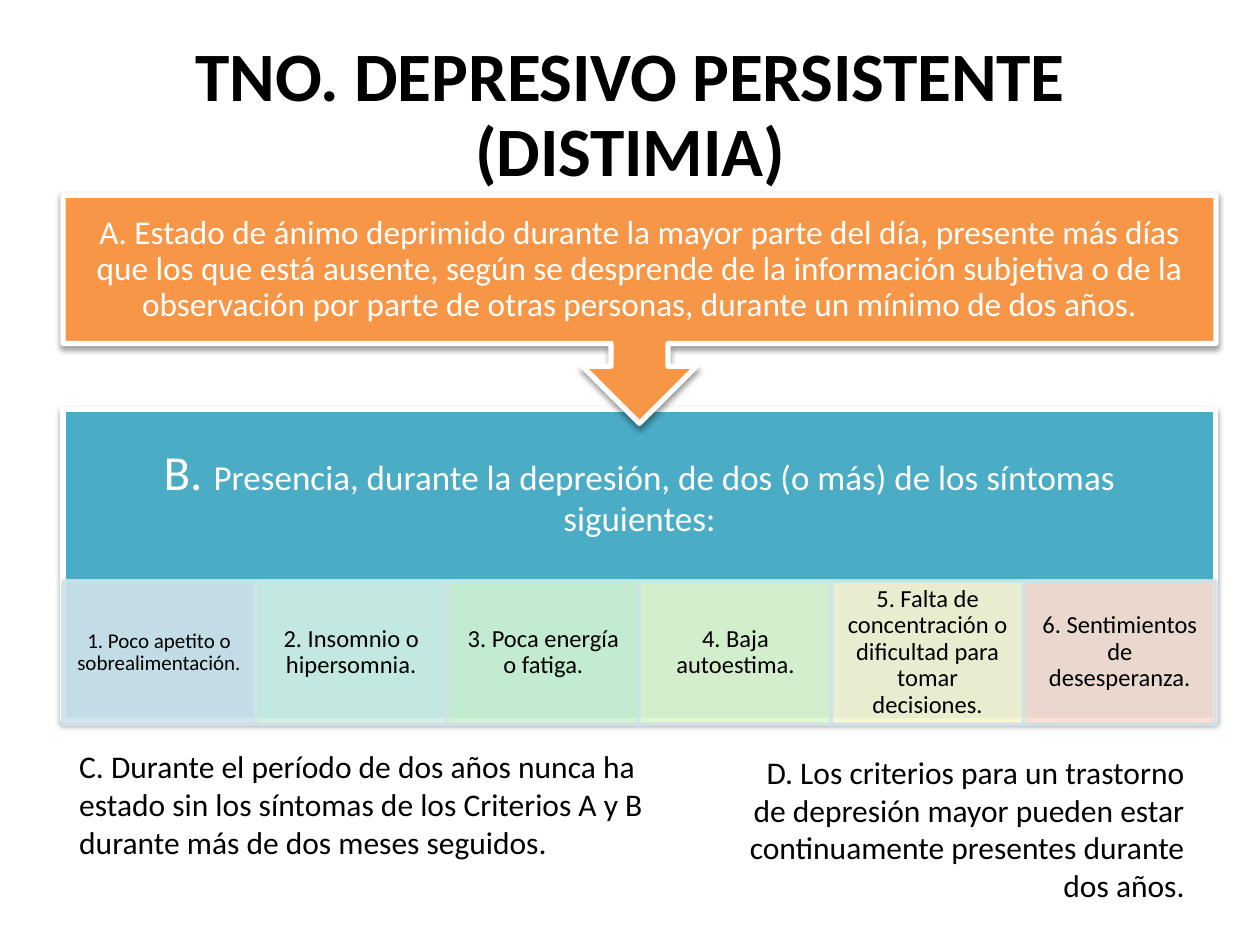
"""Build the slide on the criteria for persistent depressive disorder."""
from lxml import etree
from pptx import Presentation
from pptx.dml.color import RGBColor
from pptx.enum.shapes import MSO_SHAPE
from pptx.enum.text import MSO_ANCHOR, MSO_AUTO_SIZE, PP_ALIGN
from pptx.oxml.ns import qn
from pptx.util import Pt

RECTANGLE = MSO_SHAPE.RECTANGLE
CALLOUT = MSO_SHAPE.DOWN_ARROW_CALLOUT
MIDDLE, TOP = MSO_ANCHOR.MIDDLE, MSO_ANCHOR.TOP
LEFT, CENTER, RIGHT = PP_ALIGN.LEFT, PP_ALIGN.CENTER, PP_ALIGN.RIGHT
COLORS = {"white": "FFFFFF", "black": "000000", "orange": "F79646",
          "teal": "4BACC6", "border": "D0E3EA"}
CELL_FILLS = ["D0E3EA", "CFEFE5", "CFF2D2", "E2F6CE", "F9F5CF", "FCDDCF"]
SYMPTOMS = [
    "1. Poco apetito o sobrealimentación.",
    "2. Insomnio o hipersomnia.",
    "3. Poca energía o fatiga.",
    "4. Baja autoestima.",
    "5. Falta de concentración o dificultad para tomar decisiones.",
    "6. Sentimientos de desesperanza.",
]
DIAGRAM_LEFT, DIAGRAM_WIDTH = 36, 658.8


def write_text(shape, pieces, color, alignment, margins, anchor=MIDDLE, spacing=0.9):
    """Fill the shape with one paragraph of (text, size) pieces."""
    frame = shape.text_frame
    frame.word_wrap = True
    frame.vertical_anchor = anchor
    frame.margin_left, frame.margin_top, frame.margin_right, frame.margin_bottom = map(Pt, margins)
    paragraph = frame.paragraphs[0]
    paragraph.alignment = alignment
    paragraph.line_spacing = spacing
    for text, size in pieces:
        run = paragraph.add_run()
        run.text = text
        run.font.name = "Calibri"
        run.font.size = Pt(size)
        run.font.color.rgb = RGBColor.from_string(color)


def add_box(kind, left, top, width, height, fill, line, line_width, opacity=None):
    """Add a filled shape: translucent if opacity is given, else with a soft shadow."""
    shape = slide.shapes.add_shape(kind, Pt(left), Pt(top), Pt(width), Pt(height))
    shape.fill.solid()
    shape.fill.fore_color.rgb = RGBColor.from_string(fill)
    shape.line.color.rgb = RGBColor.from_string(line)
    shape.line.width = Pt(line_width)
    shape.shadow.inherit = False
    properties = shape._element.spPr
    if opacity:
        for color in properties.iter(qn("a:srgbClr")):
            etree.SubElement(color, qn("a:alpha"), val=str(opacity * 1000))
    else:
        shadow = etree.SubElement(properties.find(qn("a:effectLst")), qn("a:outerShdw"),
                                  blurRad=str(Pt(3.1)), dist=str(Pt(1.6)),
                                  dir="5400000", rotWithShape="0")
        color = etree.SubElement(shadow, qn("a:srgbClr"), val=COLORS["black"])
        etree.SubElement(color, qn("a:alpha"), val="38000")
    return shape


presentation = Presentation()
presentation.slide_width, presentation.slide_height = Pt(720), Pt(540)
slide = presentation.slides.add_slide(presentation.slide_layouts[5])

title = slide.shapes.title
title.left, title.top, title.width, title.height = Pt(36), Pt(21.6), Pt(648), Pt(90)
write_text(title, [("TNO. DEPRESIVO PERSISTENTE (DISTIMIA)", 39.6)],
           COLORS["black"], CENTER, (7.2, 3.6, 7.2, 3.6))
title_run = title.text_frame.paragraphs[0].runs[0]
title_run.font.bold = True
title_run._r.get_or_add_rPr().set("spc", "-10")

criterion_b = add_box(RECTANGLE, DIAGRAM_LEFT, 234, DIAGRAM_WIDTH, 177.84,
                      COLORS["teal"], COLORS["white"], 3)
write_text(criterion_b, [
    ("B. ", 28),
    ("Presencia, durante la depresión, de dos (o más) de los síntomas siguientes:", 20),
], COLORS["white"], CENTER, (15.84, 15.84, 15.84, 97.92))

cell_width = DIAGRAM_WIDTH / len(SYMPTOMS)
for index, (symptom, fill) in enumerate(zip(SYMPTOMS, CELL_FILLS)):
    cell = add_box(RECTANGLE, DIAGRAM_LEFT + index * cell_width, 332, cell_width, 81.8,
                   fill, COLORS["border"], 2, opacity=90)
    size, side = (12, 6.5) if index == 0 else (14, 7.9)
    write_text(cell, [(symptom, size)], COLORS["black"], CENTER, (side, 1.4, side, 1.4))

criterion_a = add_box(CALLOUT, DIAGRAM_LEFT, 111.6, DIAGRAM_WIDTH, 130.3,
                      COLORS["orange"], COLORS["white"], 3)
write_text(criterion_a, [(
    "A. Estado de ánimo deprimido durante la mayor parte del día, presente más días "
    "que los que está ausente, según se desprende de la información subjetiva o de la "
    "observación por parte de otras personas, durante un mínimo de dos años.", 19)],
    COLORS["white"], CENTER, (10.8, 10.8, 10.8, 10.8))

NOTES = [
    ("D. Los criterios para un trastorno de depresión mayor pueden estar "
     "continuamente presentes durante dos años.",
     (416.9, 417.6, 267.1, 111.6), RIGHT, MIDDLE),
    ("C. Durante el período de dos años nunca ha estado sin los síntomas de los "
     "Criterios A y B durante más de dos meses seguidos.",
     (38.2, 423.4, 360, 72.7), LEFT, TOP),
]
for text, position, alignment, anchor in NOTES:
    note = slide.shapes.add_textbox(*map(Pt, position))
    note.text_frame.auto_size = MSO_AUTO_SIZE.NONE
    write_text(note, [(text, 18)], COLORS["black"], alignment,
               (7.2, 3.6, 7.2, 3.6), anchor, spacing=1.0)

presentation.save("out.pptx")
